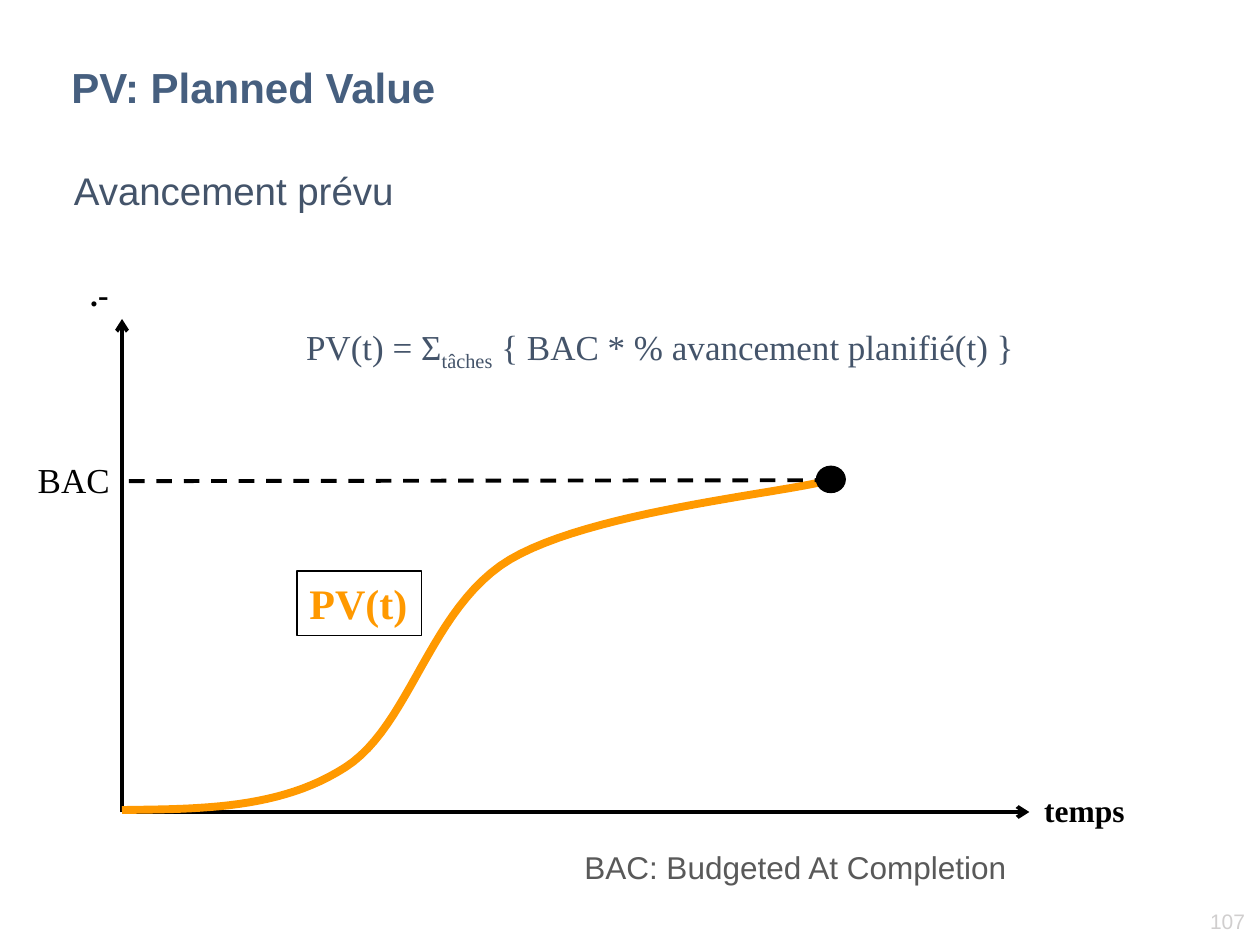
from pptx import Presentation
from pptx.dml.color import RGBColor
from pptx.enum import dml, shapes, text
from pptx.oxml import ns, xmlchemy
from pptx.util import Cm, Pt

BLACK = RGBColor(0x00, 0x00, 0x00)
WHITE = RGBColor(0xFF, 0xFF, 0xFF)
ORANGE = RGBColor(0xFF, 0x99, 0x00)
TITLE_BLUE = RGBColor(0x46, 0x5F, 0x7F)
SLATE = RGBColor(0x44, 0x54, 0x6A)
GREY = RGBColor(0x59, 0x59, 0x59)
PALE_GREY = RGBColor(0xD0, 0xCE, 0xCE)
SANS, SERIF = "Arial", "Times New Roman"
SUBSCRIPT = -25000
CURVE_STEPS = 24


def write(frame, runs, size, font, color, bold=False, wrap=True,
          align=text.PP_ALIGN.LEFT, anchor=text.MSO_ANCHOR.TOP):
    """Fill a text frame with (wording, baseline) runs in one style."""
    frame.word_wrap = wrap
    frame.vertical_anchor = anchor
    paragraph = frame.paragraphs[0]
    paragraph.alignment = align
    for wording, baseline in runs:
        run = paragraph.add_run()
        run.text = wording
        run.font.size, run.font.name, run.font.bold = Pt(size), font, bold
        run.font.color.rgb = color
        if baseline:
            run.font._element.set("baseline", str(baseline))


def add_label(slide, box, wording, size, font, color, **style):
    """Place a one-run text box at a box given in centimetres."""
    label = slide.shapes.add_textbox(*map(Cm, box))
    write(label.text_frame, [(wording, 0)], size, font, color, **style)


def add_block(slide, kind, box, fill=None, line=None):
    """Place a preset shape with an optional fill and thin outline."""
    block = slide.shapes.add_shape(kind, *map(Cm, box))
    block.shadow.inherit = False
    if fill is None:
        block.fill.background()
    else:
        block.fill.solid()
        block.fill.fore_color.rgb = fill
    if line is None:
        block.line.fill.background()
    else:
        block.line.color.rgb = line
        block.line.width = Pt(0.75)
    return block


def add_line(slide, start, end, arrow=False, dashed=False):
    """Draw a black line, with an arrowhead at its end or dashed."""
    line = slide.shapes.add_connector(
        shapes.MSO_CONNECTOR.STRAIGHT, *map(Cm, start + end))
    line.line.color.rgb = BLACK
    line.line.width = Pt(2.25)
    if dashed:
        line.line.dash_style = dml.MSO_LINE.DASH
    properties = line._element.spPr
    if arrow:
        head = xmlchemy.OxmlElement("a:tailEnd")
        head.set("type", "arrow")
        properties.find(ns.qn("a:ln")).append(head)
    properties.append(xmlchemy.OxmlElement("a:effectLst"))


def bezier(points, t):
    """Return the point at t on a cubic curve."""
    weights = ((1 - t) ** 3, 3 * t * (1 - t) ** 2, 3 * t ** 2 * (1 - t), t ** 3)
    return tuple(sum(w * p[axis] for w, p in zip(weights, points)) for axis in (0, 1))


def add_curve(slide, left, top):
    """Draw the planned value S-curve relative to the chart corner."""
    controls = [(0, 9.9), (1.6, 9.88), (3.2, 9.88), (4.5, 9.04), (5.82, 8.2),
                (6.2, 5.82), (7.82, 4.85), (9.45, 3.89), (13.18, 3.53), (14.28, 3.25)]
    points = [bezier(controls[first:first + 4], step / CURVE_STEPS)
              for first in (0, 3, 6) for step in range(1, CURVE_STEPS + 1)]
    start, *rest = [(Cm(left + x), Cm(top + y)) for x, y in controls[:1] + points]
    builder = slide.shapes.build_freeform(*start)
    builder.add_line_segments(rest, close=False)
    curve = builder.convert_to_shape()
    curve.shadow.inherit = False
    curve.fill.background()
    curve.line.color.rgb = ORANGE
    curve.line.width = Pt(4.5)


def add_heading(slide, left, top, width):
    """Place the title and the subtitle below it."""
    add_label(slide, (left, top, width, 1.42), "PV: Planned Value", 24, SANS,
              TITLE_BLUE, bold=True, anchor=text.MSO_ANCHOR.MIDDLE)
    add_label(slide, (left + 0.05, top + 2.21, 14.55, 2.08), "Avancement prévu",
              22, SANS, SLATE)


def add_chart_region(slide, left, top, width, height):
    """Draw the axes, curve, completion mark and labels in a box."""
    origin = (left, top + height)
    budget = top + 3.25
    add_label(slide, (left - 0.89, top - 1.02, 0.89, 1.02), ".-", 18, SERIF,
              BLACK, bold=True, wrap=False)
    add_line(slide, origin, (left, top), arrow=True)
    add_line(slide, origin, (left + width, top + height), arrow=True)
    add_label(slide, (left + width + 0.05, top + height - 0.55, 2.13, 1.02), "temps",
              18, SERIF, BLACK, bold=True, wrap=False)
    add_curve(slide, left, top)

    curve_name = add_block(slide, shapes.MSO_SHAPE.RECTANGLE,
                           (left + 3.53, top + 5.08, 2.51, 1.3), line=BLACK)
    write(curve_name.text_frame, [("PV(t)", 0)], 24, SERIF, ORANGE, bold=True, wrap=False)
    add_block(slide, shapes.MSO_SHAPE.OVAL, (left + 14, budget - 0.28, 0.58, 0.53),
              fill=BLACK, line=BLACK)
    formula = add_block(slide, shapes.MSO_SHAPE.RECTANGLE,
                        (left + 3.46, top, 15.67, 1.12), fill=WHITE)
    write(formula.text_frame,
          [("PV(t) = Σ", 0), ("tâches", SUBSCRIPT),
           (" { BAC * % avancement planifié(t) }", 0)], 20, SERIF, SLATE)
    add_line(slide, (left + 14.28, budget), (left + 0.08, budget + 0.02), dashed=True)
    add_label(slide, (left - 1.95, budget - 0.56, 1.96, 1.09), "BAC", 20, SERIF,
              BLACK, wrap=False)


def add_footer(slide, left, top):
    """Place the abbreviation note and the page number."""
    add_label(slide, (left, top, 11.05, 1.42), "BAC: Budgeted At Completion",
              18, SANS, GREY)
    add_label(slide, (left + 11.74, top + 1.22, 2.08, 0.76), "107", 12, SANS,
              PALE_GREY, align=text.PP_ALIGN.RIGHT)


def main():
    """Build and save the planned value slide."""
    deck = Presentation()
    deck.slide_width, deck.slide_height = Cm(25.4), Cm(19.05)
    slide = deck.slides.add_slide(deck.slide_layouts[6])
    add_heading(slide, 1.19, 1.04, 21.51)
    add_chart_region(slide, 2.46, 6.43, 18.29, 9.94)
    add_footer(slide, 11.53, 16.97)
    deck.save("out.pptx")


if __name__ == "__main__":
    main()
